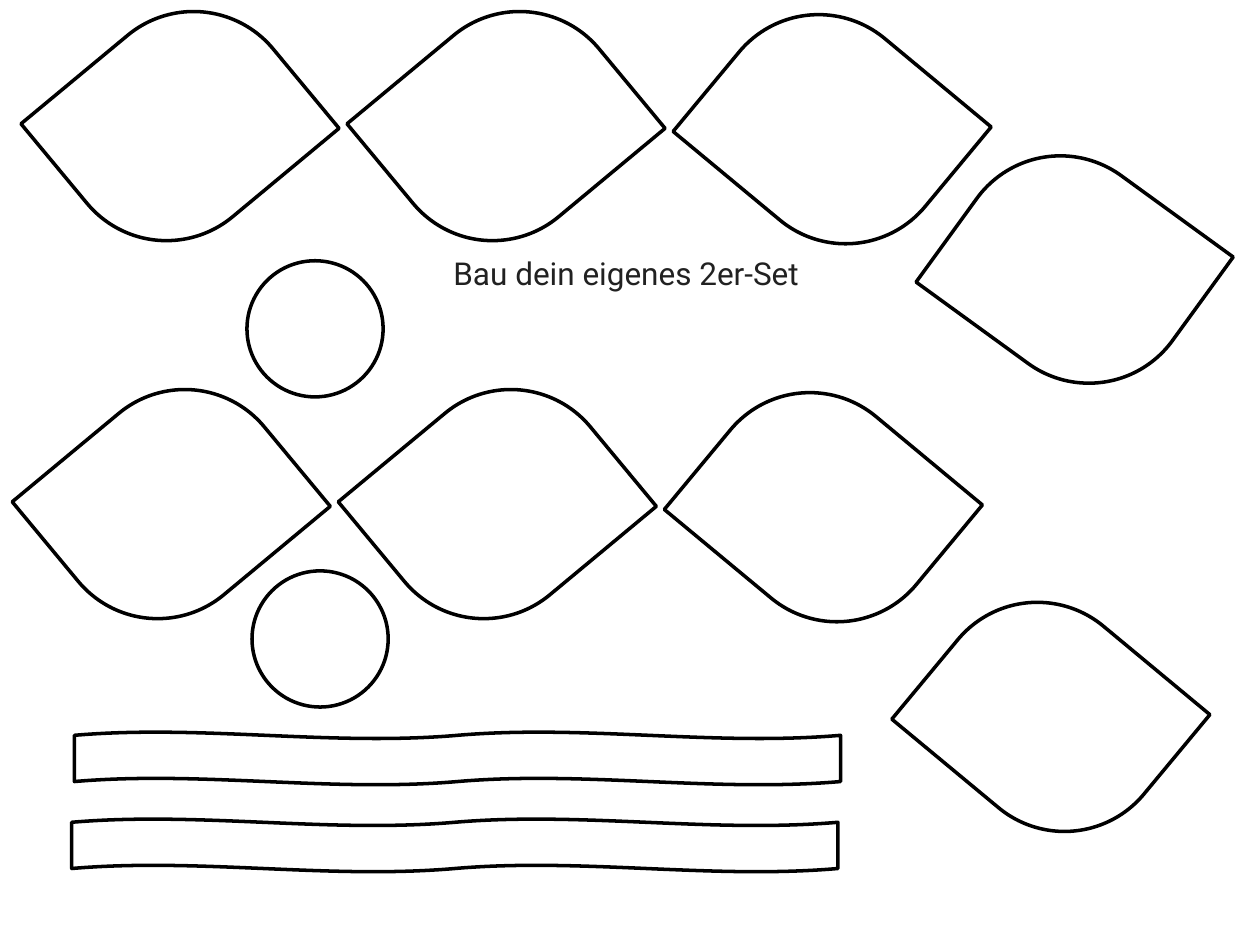
from dataclasses import dataclass
from pptx import Presentation
from pptx import util as u
from pptx.dml.color import RGBColor
from pptx.enum import shapes, text

COLORS = {"paper": "FFFFFF", "outline": "000000", "title": "212121"}
KIND = shapes.MSO_SHAPE
LEAF_STEP = 186.3
LEFT_TILT, RIGHT_TILT = -39.7, 39.7


@dataclass(frozen=True)
class Piece:
    """A cut-out outline, with lengths in points."""
    kind: shapes.MSO_SHAPE
    left: float
    top: float
    width: float
    height: float
    rotation: float = 0
    adjustments: tuple[float, ...] = ()


def leaf(left: float, top: float, tilt: float) -> Piece:
    """Return a petal whose pointed ends face left and right."""
    corners = (0, 0.5) if tilt < 0 else (0.5, 0)
    return Piece(KIND.ROUND_2_DIAG_RECTANGLE, left, top, 138.2, 118.1, tilt, corners)


def leaf_row(left: float, top: float) -> list[Piece]:
    """Return two left-tilted petals and one right-tilted petal."""
    petals = ((LEFT_TILT, 0), (LEFT_TILT, 0), (RIGHT_TILT, 1.8))
    return [leaf(left + i * LEAF_STEP, top + drop, tilt)
            for i, (tilt, drop) in enumerate(petals)]


def strip(left: float, top: float) -> Piece:
    """Return a wavy strip."""
    return Piece(KIND.DOUBLE_WAVE, left, top, 437.8, 30.2)


def circle(left: float, top: float) -> Piece:
    """Return a round centre."""
    return Piece(KIND.OVAL, left, top, 77.8, 77.8)


def draw_piece(s, piece: Piece) -> None:
    """Draw one white piece with a black outline."""
    box = (piece.left, piece.top, piece.width, piece.height)
    sp = s.shapes.add_shape(piece.kind, *map(u.Pt, box))
    sp.rotation = piece.rotation
    for i, value in enumerate(piece.adjustments):
        sp.adjustments[i] = value
    sp.shadow.inherit = False
    sp.fill.solid()
    sp.fill.fore_color.rgb = RGBColor.from_string(COLORS["paper"])
    sp.line.color.rgb = RGBColor.from_string(COLORS["outline"])
    sp.line.width = u.Pt(2)


def draw_title(s, wording: str) -> None:
    """Draw the heading of the craft sheet."""
    tf = s.shapes.add_textbox(*map(u.Pt, (252, 141.8, 234, 28.8))).text_frame
    tf.word_wrap = True
    tf.auto_size = text.MSO_AUTO_SIZE.SHAPE_TO_FIT_TEXT
    r = tf.paragraphs[0].add_run()
    r.text = wording
    r.font.name = "Roboto"
    r.font.size = u.Pt(18)
    r.font.color.rgb = RGBColor.from_string(COLORS["title"])


def main() -> None:
    """Build the craft sheet and save it."""
    prs = Presentation()
    prs.slide_width, prs.slide_height = u.Pt(720), u.Pt(540)
    s = prs.slides.add_slide(prs.slide_layouts[6])
    pieces = [
        *leaf_row(33.8, 13), leaf(545, 95, 36),
        *leaf_row(28.8, 229), leaf(531.4, 350.6, RIGHT_TILT),
        strip(42.5, 418.3), strip(41, 468),
    ]
    for piece in pieces:
        draw_piece(s, piece)
    draw_title(s, "Bau dein eigenes 2er-Set")
    for piece in (circle(141.1, 149), circle(144, 326.2)):
        draw_piece(s, piece)
    prs.save("out.pptx")


if __name__ == "__main__":
    main()
